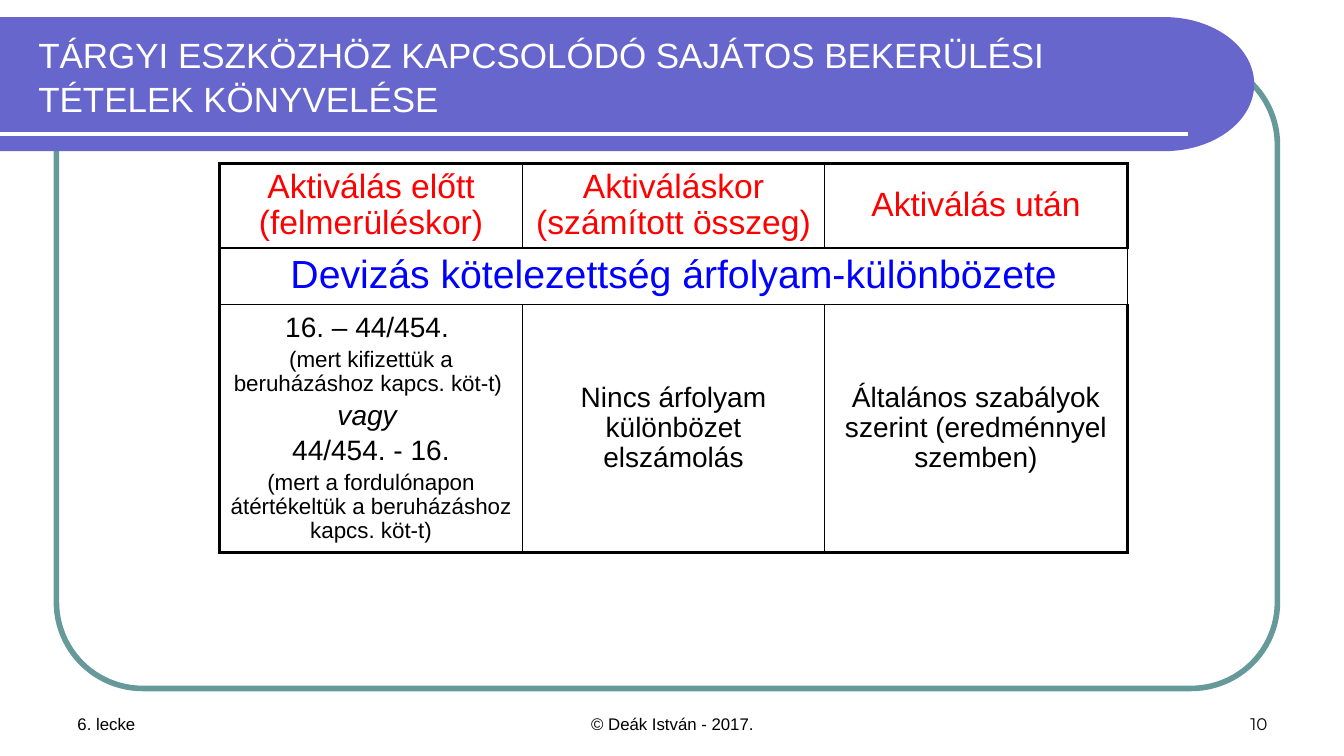
from math import cos, pi, sin

from lxml.etree import SubElement
from pptx import Presentation
from pptx.dml.color import RGBColor
from pptx.enum.shapes import MSO_CONNECTOR, MSO_SHAPE
from pptx.enum.text import MSO_ANCHOR, PP_ALIGN
from pptx.oxml.ns import qn
from pptx.util import Inches, Pt

COLORS = {
    "band": "6666CC",
    "frame": "669999",
    "white": "FFFFFF",
    "black": "000000",
    "heading": "FF0000",
    "topic": "0000FF",
}

HEADINGS = ["Aktiválás előtt (felmerüléskor)",
            "Aktiváláskor (számított összeg) ",
            "Aktiválás után"]
TOPIC = "Devizás kötelezettség árfolyam-különbözete"
# Each entry: text, size, italic
BEFORE_ACTIVATION = [
    ("16. – 44/454. ", 20, False),
    ("(mert kifizettük a beruházáshoz kapcs. köt-t) ", 16, False),
    ("vagy ", 20, True),
    ("44/454. - 16.", 20, False),
    ("(mert a fordulónapon átértékeltük a beruházáshoz kapcs. köt-t)", 16, False),
]
AT_ACTIVATION = "Nincs árfolyam különbözet elszámolás"
AFTER_ACTIVATION = "Általános szabályok szerint (eredménnyel szemben)"


def rgb(name):
    return RGBColor.from_string(COLORS[name])


def write(paragraph, text, size=20, color="black", font="Arial", italic=False,
          align=PP_ALIGN.LEFT, line_spacing=1.0, space_before=0):
    paragraph.alignment = align
    paragraph.line_spacing = line_spacing
    paragraph.space_before = Pt(space_before)
    run = paragraph.add_run()
    run.text = text
    run.font.size = Pt(size)
    run.font.name = font
    run.font.bold = False
    run.font.italic = italic
    run.font.color.rgb = rgb(color)


def add_frame(slide, left, top, width, height):
    frame = slide.shapes.add_shape(
        MSO_SHAPE.ROUNDED_RECTANGLE,
        Inches(left), Inches(top), Inches(width), Inches(height))
    frame.adjustments[0] = 0.137
    frame.shadow.inherit = False
    frame.fill.background()
    frame.line.color.rgb = rgb("frame")
    frame.line.width = Pt(4)


def add_band(slide, left, top, width, height):
    # Band with a half-elliptical right end
    cap_width, cap_height, steps = 0.89, height / 2, 48
    cap_left, middle = left + width - cap_width, top + cap_height
    angles = [pi * (step / steps - 0.5) for step in range(steps + 1)]
    cap = [(Inches(cap_left + cap_width * cos(angle)),
            Inches(middle + cap_height * sin(angle))) for angle in angles]
    outline = slide.shapes.build_freeform(Inches(left), Inches(top))
    outline.add_line_segments(cap + [(Inches(left), Inches(top + height))])
    band = outline.convert_to_shape()
    band.shadow.inherit = False
    band.fill.solid()
    band.fill.fore_color.rgb = rgb("band")
    band.line.fill.background()

    # White rule near the lower edge
    rule_y = Inches(top + height - 0.17)
    rule = slide.shapes.add_connector(
        MSO_CONNECTOR.STRAIGHT, Inches(left), rule_y,
        Inches(left + width - 0.66), rule_y)
    rule.line.color.rgb = rgb("white")
    rule.line.width = Pt(3)
    SubElement(rule._element.spPr, qn("a:effectLst"))


def add_title(slide, left, top, width, height):
    title = slide.shapes.title
    title.left, title.top = Inches(left), Inches(top)
    title.width, title.height = Inches(width), Inches(height)
    title.text_frame.word_wrap = True
    title.text_frame.vertical_anchor = MSO_ANCHOR.MIDDLE
    write(title.text_frame.paragraphs[0],
          "TÁRGYI ESZKÖZHÖZ KAPCSOLÓDÓ SAJÁTOS BEKERÜLÉSI TÉTELEK KÖNYVELÉSE",
          size=25, color="white", line_spacing=1.04)
    # Bring the title in front of the band
    slide.shapes._spTree.append(title._element)


def set_borders(cell, weights):
    properties = cell._tc.get_or_add_tcPr()
    for side, weight in zip("LRTB", weights):
        border = SubElement(properties, qn(f"a:ln{side}"), w=str(Pt(weight)))
        fill = SubElement(border, qn("a:solidFill"))
        SubElement(fill, qn("a:srgbClr"), val=COLORS["black"])


def fill_cell(cell, paragraphs, color="black"):
    cell.vertical_anchor = MSO_ANCHOR.MIDDLE
    for index, (text, size, italic) in enumerate(paragraphs):
        frame = cell.text_frame
        paragraph = frame.add_paragraph() if index else frame.paragraphs[0]
        write(paragraph, text, size=size, color=color, italic=italic,
              align=PP_ALIGN.CENTER, line_spacing=0.96,
              space_before=0.2 * size if index else 0)


def add_booking_table(slide, left, top, width, row_heights):
    rows, columns = len(row_heights), len(HEADINGS)
    table = slide.shapes.add_table(
        rows, columns, Inches(left), Inches(top),
        Inches(width), Inches(sum(row_heights))).table
    table.first_row = table.horz_banding = False
    for row, height in zip(table.rows, row_heights):
        row.height = Inches(height)

    # Heavy outer border, thin inner lines
    for r in range(rows):
        for c in range(columns):
            outer = (c == 0, c == columns - 1, r == 0, r == rows - 1)
            cell = table.cell(r, c)
            set_borders(cell, [2.25 if edge else 1 for edge in outer])
            cell.fill.background()

    # Headings, topic row and entries
    table.cell(1, 0).merge(table.cell(1, columns - 1))
    for c, heading in enumerate(HEADINGS):
        fill_cell(table.cell(0, c), [(heading, 24, False)], color="heading")
    fill_cell(table.cell(1, 0), [(TOPIC, 28, False)], color="topic")
    entries = [BEFORE_ACTIVATION, [(AT_ACTIVATION, 20, False)],
               [(AFTER_ACTIVATION, 20, False)]]
    for c, entry in enumerate(entries):
        fill_cell(table.cell(2, c), entry)


def add_footer(slide, left, top, width, height):
    side, center = 3.11, 4.22
    parts = [
        ("6. lecke", left, side, PP_ALIGN.LEFT, "Arial"),
        ("© Deák István - 2017.", left + (width - center) / 2, center,
         PP_ALIGN.CENTER, "Arial"),
        ("10", left + width - side, side, PP_ALIGN.RIGHT, "Montserrat"),
    ]
    for text, part_left, part_width, align, font in parts:
        part = slide.shapes.add_textbox(
            Inches(part_left), Inches(top), Inches(part_width), Inches(height))
        part.text_frame.word_wrap = True
        part.text_frame.vertical_anchor = MSO_ANCHOR.BOTTOM
        write(part.text_frame.paragraphs[0], text, size=12, font=font, align=align)


def main():
    deck = Presentation()
    deck.slide_width, deck.slide_height = Inches(13.33), Inches(7.5)
    slide = deck.slides.add_slide(deck.slide_layouts[5])
    add_frame(slide, 0.56, 0.58, 12.11, 6.25)
    add_band(slide, 0, 0.17, 12.44, 1.33)
    add_footer(slide, 0.67, 6.83, 12, 0.5)
    add_title(slide, 0.28, 0.25, 11.69, 1)
    add_booking_table(slide, 2.18, 1.62, 9, [0.84, 0.56, 2.46])
    deck.save("out.pptx")


if __name__ == "__main__":
    main()
